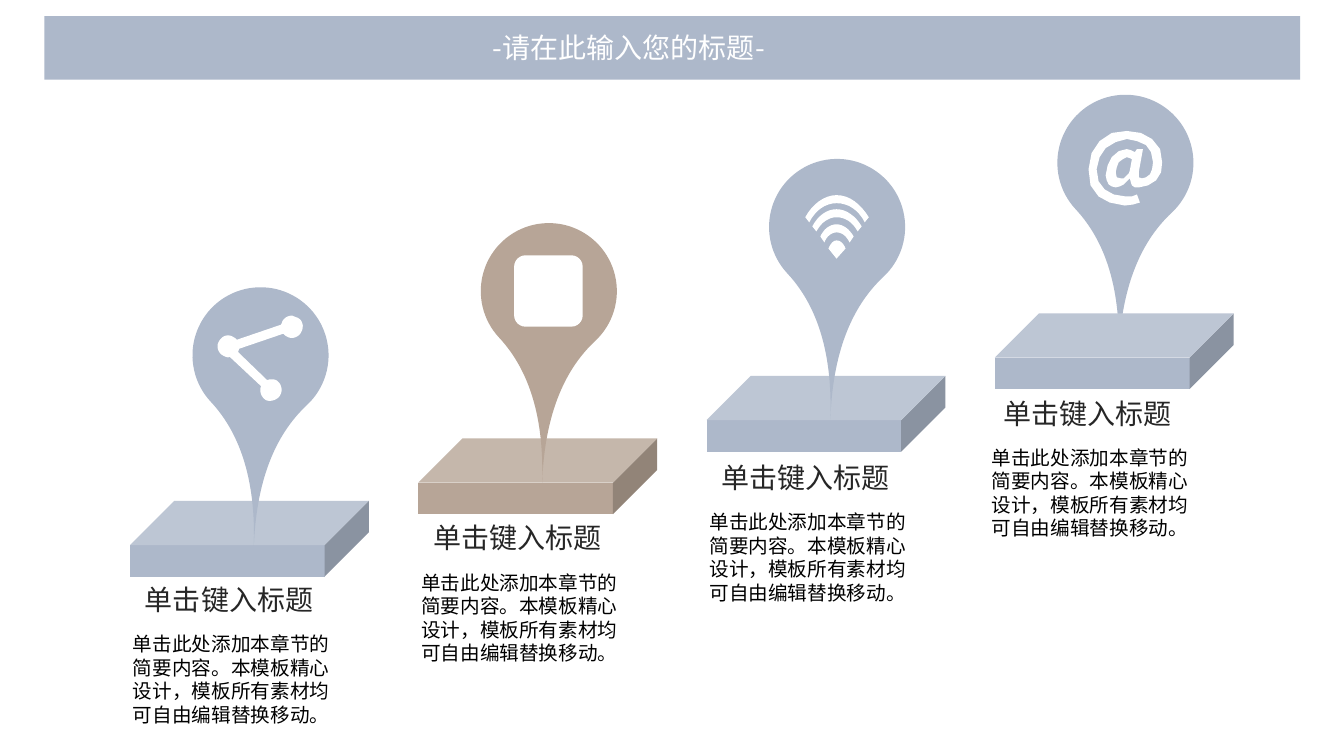
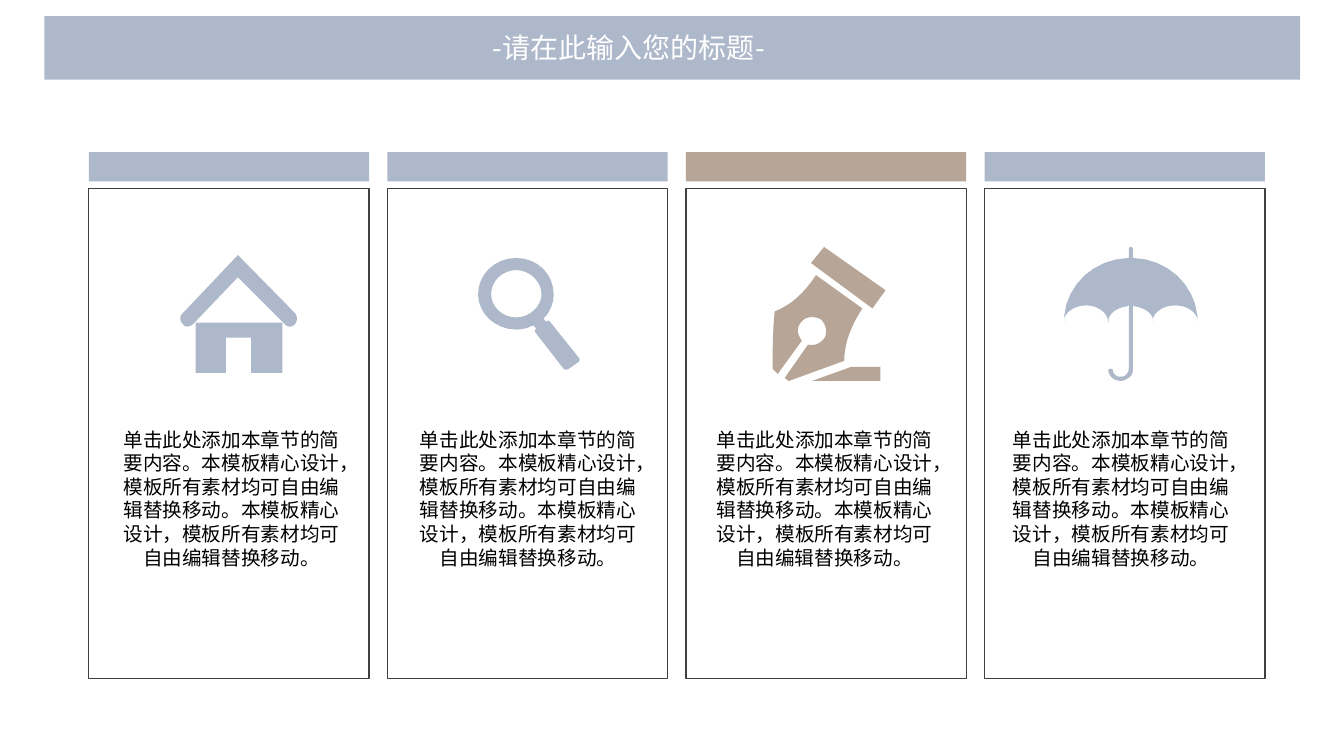
from dataclasses import dataclass

from lxml.etree import SubElement
from pptx import Presentation
from pptx.dml.color import RGBColor
from pptx.enum.shapes import MSO_SHAPE
from pptx.enum.text import MSO_ANCHOR, MSO_AUTO_SIZE, PP_ALIGN
from pptx.oxml.ns import qn
from pptx.util import Pt


@dataclass(frozen=True)
class Theme:
    font: str = "Noto Sans CJK SC"
    blue: str = "ADB8CA"
    tan: str = "B7A597"
    white: str = "FFFFFF"
    frame: str = "404040"
    head: str = "262626"
    body: str = "000000"
    large: int = 20
    small: int = 14
    unit: float = 0.72  # points per icon unit


THEME = Theme()

# An icon is a list of contours. A pair is a corner, six numbers a Bezier curve.
SHARE = [[
    (74, 0), (76, 1, 76, 1, 79, 2), (84, 4, 86, 11, 83, 16),
    (81, 21, 74, 24, 69, 21), (67, 20, 66, 19, 65, 18), (21, 33),
    (21, 34, 21, 35, 20, 36), (49, 64), (52, 63, 55, 63, 58, 64),
    (63, 67, 65, 74, 62, 79), (60, 83, 53, 86, 48, 84),
    (43, 81, 41, 75, 43, 70), (12, 41), (10, 42, 8, 41, 6, 40),
    (1, 38, -2, 31, 1, 26), (4, 20, 10, 18, 15, 21),
    (17, 22, 18, 23, 19, 24), (63, 9), (63, 8, 64, 7, 64, 6),
    (66, 2, 70, 0, 74, 0),
]]
SIGNAL = [
    [(31, 45), (35, 45, 38, 48, 40, 53), (31, 63), (23, 53),
     (25, 48, 28, 45, 31, 45)],
    [(31, 29), (38, 29, 44, 34, 48, 41), (44, 47), (41, 41, 37, 37, 31, 37),
     (26, 37, 21, 41, 19, 47), (15, 41), (18, 34, 24, 29, 31, 29)],
    [(31, 14), (41, 14, 50, 21, 56, 31), (52, 36), (47, 27, 40, 22, 31, 22),
     (23, 22, 16, 27, 11, 36), (7, 31), (12, 21, 21, 14, 31, 14)],
    [(31, 0), (44, 0, 55, 9, 63, 22), (59, 27), (53, 15, 43, 8, 31, 8),
     (20, 8, 10, 15, 4, 27), (0, 22), (7, 9, 19, 0, 31, 0)],
]
AT_SIGN = [
    [(48, 18), (54, 18), (50, 40), (50, 46), (53, 47), (57, 46), (61, 43),
     (63, 38), (64, 31), (62, 21), (57, 14), (48, 10), (38, 8), (27, 11),
     (17, 17), (11, 26), (8, 38), (10, 50), (16, 58), (25, 63), (37, 65),
     (43, 65), (48, 63), (51, 71), (44, 73), (36, 74), (21, 71), (10, 65),
     (2, 54), (0, 38), (3, 22), (11, 10), (23, 2), (38, 0), (52, 2),
     (63, 8), (71, 18), (73, 31), (72, 41), (67, 49), (59, 54), (50, 56),
     (46, 56), (43, 54), (42, 51), (41, 47), (38, 50), (35, 53), (31, 55),
     (27, 56), (23, 55), (20, 53), (18, 49), (17, 44), (19, 34), (23, 26),
     (30, 20), (38, 18), (42, 19), (46, 21)],
    [(43, 28), (41, 27), (38, 26), (34, 28), (30, 31), (28, 36), (27, 41),
     (28, 46), (32, 47), (35, 47), (37, 45), (40, 42), (41, 39)],
]
HOUSE = [
    [(58, 22), (104, 68), (107, 72, 112, 72, 115, 68),
     (117, 65, 117, 61, 115, 58), (58, 0), (3, 58), (0, 61, 0, 65, 3, 68),
     (5, 72, 10, 72, 14, 68)],
    [(16, 67), (16, 117), (46, 117), (46, 82), (71, 82), (71, 117),
     (102, 117), (102, 67)],
]
LENS = [
    [(38, 12), (24, 12, 13, 23, 13, 36), (13, 48, 24, 59, 38, 59),
     (51, 59, 63, 48, 63, 36), (63, 23, 51, 12, 38, 12)],
    [(38, 0), (59, 0, 75, 16, 75, 36), (75, 44, 72, 52, 67, 58), (65, 60),
     (67, 63), (68, 63), (69, 62, 71, 62, 72, 64), (100, 99),
     (101, 100, 101, 102, 100, 103), (90, 110), (88, 111, 86, 111, 85, 110),
     (57, 74), (56, 73, 56, 71, 58, 70), (55, 67), (52, 68),
     (48, 70, 43, 71, 38, 71), (17, 71, 0, 55, 0, 36), (0, 16, 17, 0, 38, 0)],
]
PEN = [
    [(5, 126), (0, 121), (0, 103, 0, 84, 2, 64), (18, 58, 32, 45, 43, 28),
     (89, 61), (78, 78, 71, 95, 71, 113), (16, 133), (12, 130), (35, 97),
     (41, 98, 46, 97, 51, 91), (55, 85, 53, 77, 48, 72),
     (41, 68, 32, 69, 28, 75), (23, 81, 25, 88, 29, 93)],
    [(39, 133), (107, 133), (107, 119), (78, 119)],
    [(99, 61), (112, 43), (51, 0), (38, 16)],
]
BROLLY = [[
    (66, 0), (67, 0, 68, 1, 68, 2), (68, 11), (69, 11),
    (102, 12, 129, 37, 132, 68), (132, 75), (132, 71),
    (130, 64, 121, 58, 110, 58), (99, 58, 90, 64, 88, 71), (88, 75), (88, 71),
    (86, 65, 79, 60, 70, 59), (68, 58), (68, 123), (68, 126, 65, 130, 62, 131),
    (58, 134, 53, 133, 49, 131), (46, 129, 43, 125, 44, 121), (48, 121),
    (48, 124, 49, 126, 52, 128), (54, 129, 57, 129, 60, 128),
    (62, 126, 64, 124, 64, 121), (64, 58), (62, 59), (53, 60, 46, 65, 44, 71),
    (44, 75), (43, 71), (41, 64, 32, 58, 22, 58), (11, 58, 2, 64, 0, 71),
    (0, 75), (0, 68), (3, 37, 30, 12, 63, 11), (64, 11), (64, 2),
    (64, 1, 65, 0, 66, 0),
]]


def draw(slide, form, x, y, w=0, h=0, fill=None, line=None, adjust=None, turn=0):
    """Add a preset shape, or an icon at its natural size if form is a list."""
    if isinstance(form, list):
        fine = 10
        pen = None
        for outline in form:
            dots = []
            for item in outline:
                if len(item) == 2:
                    dots.append(item)
                    continue
                knots = [dots[-1], item[:2], item[2:4], item[4:]]
                for t in (n / 8 for n in range(1, 9)):
                    u = 1 - t
                    parts = (u ** 3, 3 * u * u * t, 3 * u * t * t, t ** 3)
                    dots.append(tuple(
                        sum(p * k[axis] for p, k in zip(parts, knots))
                        for axis in (0, 1)))
            dots = [(px * fine, py * fine) for px, py in dots]
            if pen is None:
                pen = slide.shapes.build_freeform(*dots[0], scale=Pt(THEME.unit) / fine)
            else:
                pen.move_to(*dots[0])
            pen.add_line_segments(dots[1:], close=True)
        shape = pen.convert_to_shape(Pt(x), Pt(y))
    else:
        shape = slide.shapes.add_shape(form, Pt(x), Pt(y), Pt(w), Pt(h))
    shape.shadow.inherit = False
    shape.rotation = turn
    if adjust is not None:
        shape.adjustments[0] = adjust
    if fill:
        shape.fill.solid()
        shape.fill.fore_color.rgb = RGBColor.from_string(fill)
    else:
        shape.fill.background()
    if line:
        shape.line.color.rgb = RGBColor.from_string(line)
        shape.line.width = Pt(1)
    else:
        shape.line.fill.background()
    return shape


def write(box, text, size=THEME.small, color=THEME.body, align=PP_ALIGN.LEFT,
          anchor=MSO_ANCHOR.TOP):
    frame = box.text_frame
    frame.word_wrap = True
    frame.auto_size = MSO_AUTO_SIZE.NONE
    frame.vertical_anchor = anchor
    para = frame.paragraphs[0]
    para.alignment = align
    run = para.add_run()
    run.text = text
    run.font.size = Pt(size)
    run.font.color.rgb = RGBColor.from_string(color)
    run.font.name = THEME.font
    SubElement(run.font._element, qn("a:ea"), typeface=THEME.font)


deck = Presentation()
deck.slide_width, deck.slide_height = Pt(960), Pt(540)
pages = [deck.slides.add_slide(deck.slide_layouts[5]) for _ in range(2)]

for page in pages:
    band = draw(page, MSO_SHAPE.RECTANGLE, 31.7, 11.5, 897.1, 45.4, THEME.blue)
    title = page.shapes.title
    title._element.addprevious(band._element)
    title.left, title.top, title.width, title.height = Pt(344.9), Pt(18), Pt(270), Pt(31.7)
    write(title, "-请在此输入您的标题-", size=THEME.large, color=THEME.white,
          align=PP_ALIGN.JUSTIFY, anchor=MSO_ANCHOR.MIDDLE)

# Rising steps with pins
stairs, cards = pages
NOTE = "单击此处添加本章节的简要内容。本模板精心设计，模板所有素材均可自由编辑替换移动。"
# icon, its offset in the pin, place of the heading
steps = [
    (SHARE, 18, 20.2, 96.5, 412.6),
    (MSO_SHAPE.ROUNDED_RECTANGLE, 23.8, 23, 302.4, 368.6),
    (SIGNAL, 25.9, 25.9, 508.3, 325.4),
    (AT_SIGN, 22.3, 25.9, 709.9, 279.4),
]
for i, (icon, dx, dy, left, top) in enumerate(steps):
    tint = THEME.tan if i == 1 else THEME.blue
    pin_x, pin_y = 137.5 + 205.92 * i, 205.2 - 45.84 * i
    block = (MSO_SHAPE.CUBE, 92.9 + 205.92 * i, 357.8 - 44.64 * i, 170.6, 54, tint, None, 0.584)
    pin = (MSO_SHAPE.TEAR, pin_x, pin_y, 97.2, 97.2, tint, None, 2, 137)
    last = i == len(steps) - 1
    for part in (pin, block) if last else (block, pin):
        draw(stairs, *part)
    draw(stairs, icon, pin_x + dx, pin_y + dy, 49, 51, THEME.white)
    head = stairs.shapes.add_textbox(Pt(left), Pt(top), Pt(158.4), Pt(31.7))
    write(head, "单击键入标题", size=THEME.large, color=THEME.head)
    note = stairs.shapes.add_textbox(Pt(left - 8.6), Pt(top + 35.5), Pt(160), Pt(88))
    write(note, NOTE)

# Four cards in a row
MORE = NOTE + "本模板精心设计，模板所有素材均可自由编辑替换移动。"
icons = [(HOUSE, 64.8, 182.2), (LENS, 64.8, 184.3), (PEN, 61.9, 176.4), (BROLLY, 56.9, 176.4)]
for i, (icon, dx, top) in enumerate(icons):
    tint = THEME.tan if i == 2 else THEME.blue
    left = 63.4 + 213.3 * i
    draw(cards, MSO_SHAPE.RECTANGLE, left, 134.6, 200.2, 349.9, line=THEME.frame)
    draw(cards, MSO_SHAPE.RECTANGLE, left, 108.7, 200.2, 20.9, tint)
    draw(cards, icon, left + dx, top, fill=tint)
    note = cards.shapes.add_textbox(Pt(79.4 + 211.8 * i), Pt(302), Pt(172), Pt(129))
    write(note, MORE, align=PP_ALIGN.CENTER)

deck.save("out.pptx")
